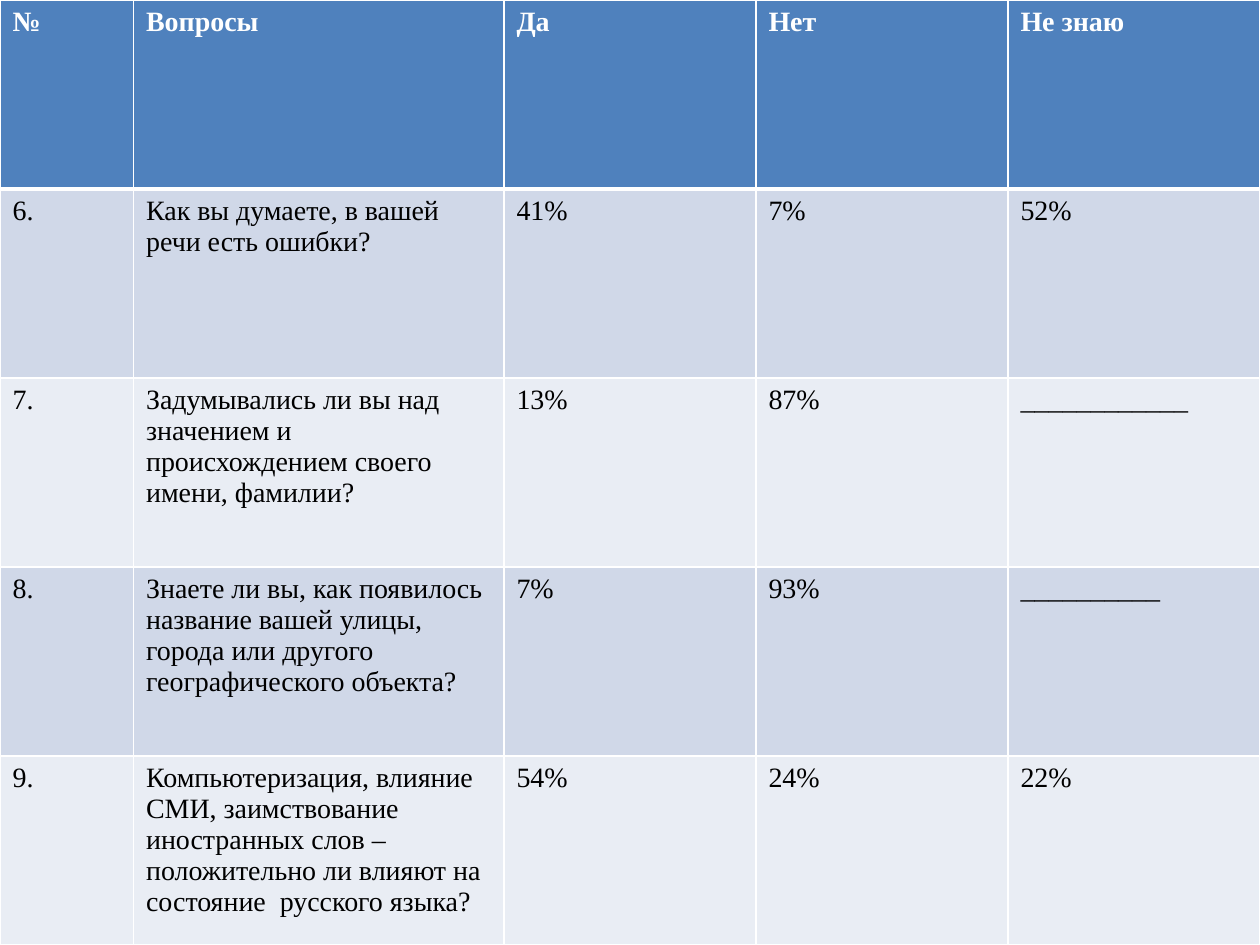
from lxml import etree
from pptx import Presentation
from pptx.dml import color
from pptx.oxml import ns
from pptx.util import Pt

FONT = "Times New Roman"
WHITE, BLACK, BLUE = "FFFFFF", "000000", "4F81BD"
BANDS = ("D0D8E8", "E9EDF4")
COLUMN_WIDTHS = (76.32, 211.68, 144, 144, 144)
SURVEY = (
    ("№", "Вопросы", "Да", "Нет", "Не знаю"),
    ("6.", "Как вы думаете, в вашей речи есть ошибки?", "41%", "7%", "52%"),
    ("7.", "Задумывались ли вы над значением и происхождением своего имени, фамилии?",
     "13%", "87%", "_" * 12),
    ("8.", "Знаете ли вы, как появилось название вашей улицы, города или другого "
     "географического объекта?", "7%", "93%", "_" * 10),
    ("9.", "Компьютеризация, влияние СМИ, заимствование иностранных слов – "
     "положительно ли влияют на состояние  русского языка?", "54%", "24%", "22%"),
)


def rgb(value):
    """Turn a hex string into a colour."""
    return color.RGBColor.from_string(value)


def write(cell, content, size=16, ink=BLACK, bold=False):
    """Put formatted text into a cell."""
    span = cell.text_frame.paragraphs[0].add_run()
    span.text = content
    span.font.name = FONT
    span.font.size = Pt(size)
    span.font.bold = bold
    span.font.color.rgb = rgb(ink)


def set_borders(cell, top=1, bottom=1):
    """Draw white borders, with their own widths at top and bottom."""
    properties = cell._tc.get_or_add_tcPr()
    widths = {"a:lnL": 1, "a:lnR": 1, "a:lnT": top, "a:lnB": bottom}
    for index, (tag, width) in enumerate(widths.items()):
        line = etree.Element(ns.qn(tag), w=str(Pt(width)))
        fill = etree.SubElement(line, ns.qn("a:solidFill"))
        etree.SubElement(fill, ns.qn("a:srgbClr"), val=WHITE)
        properties.insert(index, line)


def add_survey(page, left, top, width, height):
    """Fill the given box with the survey table."""
    frame = page.shapes.add_table(len(SURVEY), len(COLUMN_WIDTHS),
                                  Pt(left), Pt(top), Pt(width), Pt(height))
    table = frame.table
    for column, share in zip(table.columns, COLUMN_WIDTHS):
        column.width = Pt(share * width / sum(COLUMN_WIDTHS))
    for number, answers in enumerate(SURVEY):
        table.rows[number].height = Pt(height / len(SURVEY))
        header = number == 0
        for cell, content in zip(table.rows[number].cells, answers):
            write(cell, content, ink=WHITE if header else BLACK, bold=header)
            cell.fill.solid()
            cell.fill.fore_color.rgb = rgb(BLUE if header else BANDS[(number - 1) % 2])
            set_borders(cell, top=3 if number == 1 else 1, bottom=3 if header else 1)


def main():
    """Build the deck and save it."""
    deck = Presentation()
    deck.slide_width, deck.slide_height = Pt(720), Pt(540)
    page = deck.slides.add_slide(deck.slide_layouts.get_by_name("Blank"))
    add_survey(page, 0, 0, 720, 540)
    deck.save("out.pptx")


if __name__ == "__main__":
    main()
